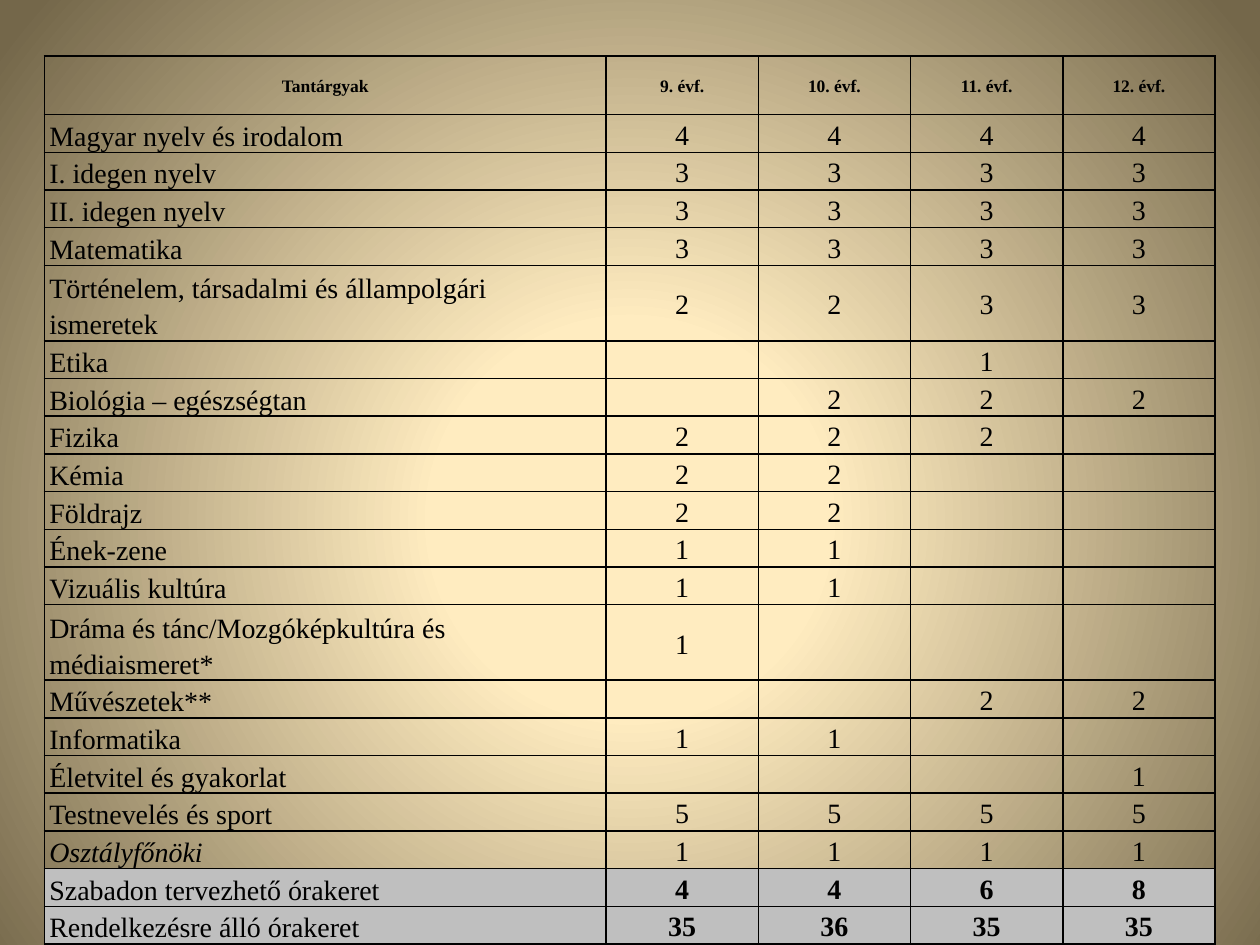
from dataclasses import dataclass

from lxml import etree
from pptx import Presentation
from pptx.dml.color import RGBColor
from pptx.enum import text
from pptx.oxml import ns, parse_xml
from pptx.util import Pt


@dataclass(frozen=True)
class Theme:
    font: str = "Times New Roman"
    ink: str = "000000"
    total_fill: str = "BFBFBF"
    glow: tuple = ((0, "FFECC2"), (25, "FFECC0"), (100, "74674A"))
    header_size: int = 10
    body_size: int = 16
    line_spacing: float = 1.15
    border: int = 1


THEME = Theme()
LEFT, TOP = 25.3, 32
COLUMN_WIDTHS = [321] + [87] * 4
HEADER_HEIGHT, LINE_HEIGHT = 33.5, 21.55
CELL_INSET = 2.9

GRADES = ["Tantárgyak", "9. évf.", "10. évf.", "11. évf.", "12. évf."]
SUBJECTS = [
    ("Magyar nyelv és irodalom", 4, 4, 4, 4),
    ("I. idegen nyelv", 3, 3, 3, 3),
    ("II. idegen nyelv", 3, 3, 3, 3),
    ("Matematika", 3, 3, 3, 3),
    ("Történelem, társadalmi és állampolgári ismeretek", 2, 2, 3, 3),
    ("Etika", "", "", 1, ""),
    ("Biológia – egészségtan", "", 2, 2, 2),
    ("Fizika", 2, 2, 2, ""),
    ("Kémia", 2, 2, "", ""),
    ("Földrajz", 2, 2, "", ""),
    ("Ének-zene", 1, 1, "", ""),
    ("Vizuális kultúra", 1, 1, "", ""),
    ("Dráma és tánc/Mozgóképkultúra és médiaismeret*", 1, "", "", ""),
    ("Művészetek**", "", "", 2, 2),
    ("Informatika", 1, 1, "", ""),
    ("Életvitel és gyakorlat", "", "", "", 1),
    ("Testnevelés és sport", 5, 5, 5, 5),
    ("Osztályfőnöki", 1, 1, 1, 1),
]
TOTALS = [
    ("Szabadon tervezhető órakeret", 4, 4, 6, 8),
    ("Rendelkezésre álló órakeret", 35, 36, 35, 35),
]
TWO_LINE_SUBJECTS = {SUBJECTS[4][0], SUBJECTS[12][0]}
ITALIC_SUBJECT = "Osztályfőnöki"


def paint_background(slide):
    """Fill the slide with a circular glow centred just below the middle."""
    slide.background.fill.gradient()
    gradient = slide.element.find(".//" + ns.qn("a:gradFill"))
    stops = "".join(
        f'<a:gs pos="{place * 1000}"><a:srgbClr val="{color}"/></a:gs>'
        for place, color in THEME.glow
    )
    glow = parse_xml(
        f'<a:gradFill {ns.nsdecls("a")} rotWithShape="1"><a:gsLst>{stops}</a:gsLst>'
        '<a:path path="circle">'
        '<a:fillToRect l="10000" t="110000" r="10000" b="100000"/>'
        "</a:path></a:gradFill>"
    )
    gradient.getparent().replace(gradient, glow)


def write(cell, wording, *, size, bold=False, italic=False, centred=True):
    cell.margin_left = cell.margin_right = Pt(CELL_INSET)
    cell.margin_top = cell.margin_bottom = 0
    anchor = text.MSO_ANCHOR
    cell.vertical_anchor = anchor.MIDDLE if centred else anchor.BOTTOM
    paragraph = cell.text_frame.paragraphs[0]
    paragraph.alignment = text.PP_ALIGN.CENTER if centred else text.PP_ALIGN.LEFT
    paragraph.line_spacing = THEME.line_spacing
    if wording == "":
        # The end mark sets the height of an empty cell.
        end_mark = parse_xml(f'<a:endParaRPr {ns.nsdecls("a")} sz="{size * 100}"/>')
        paragraph.font.size = Pt(size)
        for old in paragraph._p.findall(ns.qn("a:endParaRPr")):
            paragraph._p.remove(old)
        paragraph._p.append(end_mark)
        return
    run = paragraph.add_run()
    run.text = str(wording)
    run.font.name = THEME.font
    run.font.size = Pt(size)
    run.font.bold = bold
    run.font.italic = italic
    run.font.color.rgb = RGBColor.from_string(THEME.ink)


def outline(cell):
    properties = cell._tc.get_or_add_tcPr()
    for side in ("lnL", "lnR", "lnT", "lnB"):
        line = etree.SubElement(
            properties, ns.qn(f"a:{side}"), w=str(int(Pt(THEME.border)))
        )
        solid = etree.SubElement(line, ns.qn("a:solidFill"))
        etree.SubElement(solid, ns.qn("a:srgbClr"), val=THEME.ink)


def shade(cell, color=None):
    if color:
        cell.fill.solid()
        cell.fill.fore_color.rgb = RGBColor.from_string(color)
    else:
        cell.fill.background()


def fill_row(row, values, *, size, fill=None, header=False, bold_hours=False):
    for column, (cell, value) in enumerate(zip(row.cells, values)):
        is_subject = column == 0 and not header
        outline(cell)
        shade(cell, fill)
        write(
            cell,
            value,
            size=size,
            bold=header or (bold_hours and not is_subject),
            italic=value == ITALIC_SUBJECT,
            centred=not is_subject,
        )


def add_timetable(slide):
    lessons = SUBJECTS + TOTALS
    heights = [HEADER_HEIGHT] + [
        LINE_HEIGHT * (2 if lesson[0] in TWO_LINE_SUBJECTS else 1)
        for lesson in lessons
    ]
    timetable = slide.shapes.add_table(
        len(heights), len(GRADES), Pt(LEFT), Pt(TOP),
        Pt(sum(COLUMN_WIDTHS)), Pt(sum(heights)),
    ).table
    timetable.first_row = timetable.horz_banding = False
    for column, width in zip(timetable.columns, COLUMN_WIDTHS):
        column.width = Pt(width)
    for row, height in zip(timetable.rows, heights):
        row.height = Pt(height)

    header, *body = timetable.rows
    fill_row(header, GRADES, size=THEME.header_size, header=True)
    for row, lesson in zip(body, lessons):
        is_total = lesson in TOTALS
        fill_row(
            row, lesson, size=THEME.body_size, bold_hours=is_total,
            fill=THEME.total_fill if is_total else None,
        )


def main():
    deck = Presentation()
    deck.slide_width, deck.slide_height = Pt(720), Pt(540)
    slide = deck.slides.add_slide(deck.slide_layouts.get_by_name("Blank"))
    paint_background(slide)
    add_timetable(slide)
    deck.save("out.pptx")


if __name__ == "__main__":
    main()
